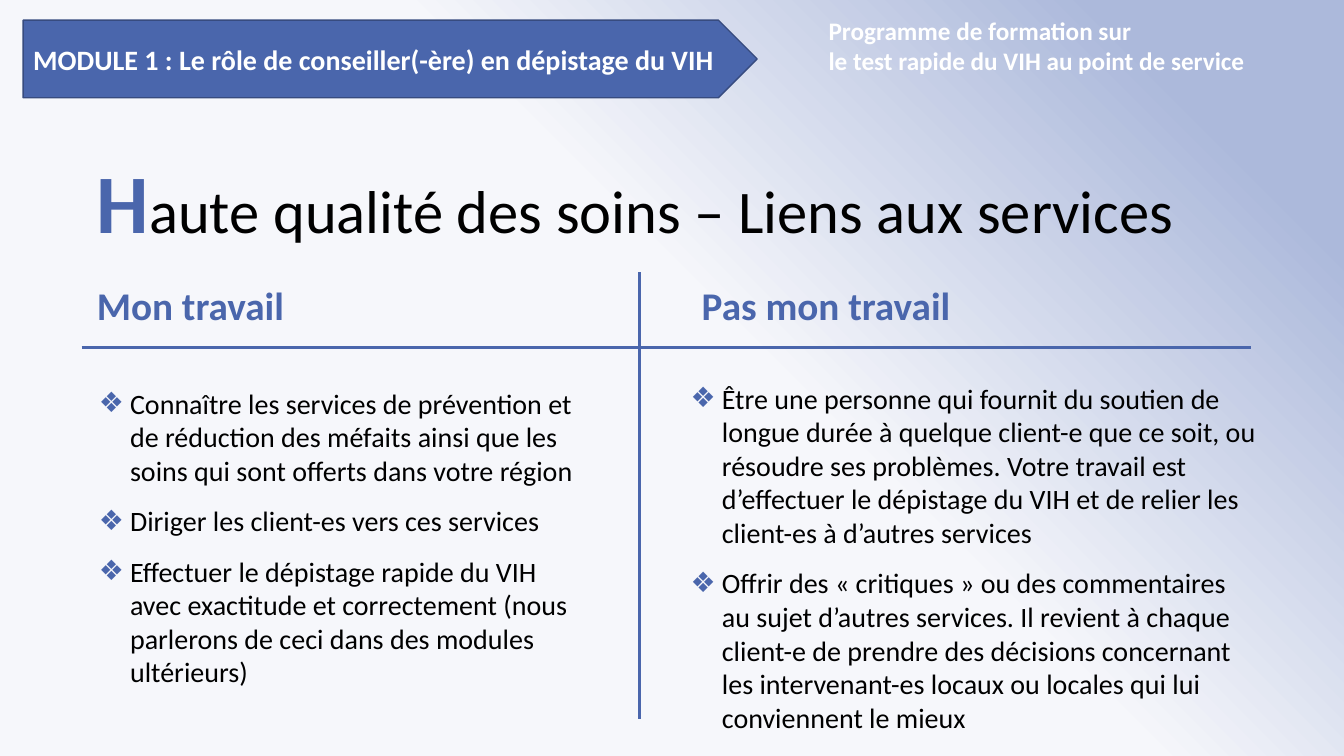
from dataclasses import dataclass

from lxml import etree
from pptx import Presentation
from pptx import util as u
from pptx.dml import color as dml
from pptx.enum import shapes, text
from pptx.oxml import ns

COLOURS = {
    "accent": "4A66AC", "edge": "374B7F", "ink": "000000", "white": "FFFFFF",
    "pale": "F6F7FB", "haze": "ACB9DB", "mist": "C8D1E7",
}
BACKGROUND_STOPS = [(55, "pale"), (88, "haze"), (100, "haze"), (100, "mist")]
FONT = "Calibri"
BULLET_INDENT = u.Inches(0.31)


@dataclass(frozen=True)
class Box:
    left: float
    top: float
    width: float
    height: float

    def lengths(self) -> list:
        return [u.Inches(n) for n in (self.left, self.top, self.width, self.height)]


@dataclass(frozen=True)
class Column:
    heading: str
    heading_box: Box
    items: tuple[str, ...]
    list_box: Box


@dataclass(frozen=True)
class Rule:
    start: tuple[float, float]
    end: tuple[float, float]


COLUMNS = [
    Column(
        "Mon travail", Box(0.86, 2.79, 5.2, 0.55),
        ("Connaître les services de prévention et de réduction des méfaits ainsi que "
         "les soins qui sont offerts dans votre région",
         "Diriger les client-es vers ces services",
         "Effectuer le dépistage rapide du VIH avec exactitude et correctement (nous "
         "parlerons de ceci dans des modules ultérieurs)"),
        Box(0.88, 3.78, 5.07, 3.13)),
    Column(
        "Pas mon travail", Box(6.86, 2.79, 5.2, 0.55),
        ("Être une personne qui fournit du soutien de longue durée à quelque client-e "
         "que ce soit, ou résoudre ses problèmes. Votre travail est d’effectuer le "
         "dépistage du VIH et de relier les client-es à d’autres services",
         "Offrir des « critiques » ou des commentaires au sujet d’autres services. Il "
         "revient à chaque client-e de prendre des décisions concernant les "
         "intervenant-es locaux ou locales qui lui conviennent le mieux"),
        Box(6.75, 3.73, 5.82, 3.64)),
]
RULES = [Rule((6.34, 2.7), (6.34, 7.13)), Rule((0.81, 3.45), (12.41, 3.45))]


def rgb(name: str) -> dml.RGBColor:
    return dml.RGBColor.from_string(COLOURS[name])


def add_colour(parent, name: str) -> None:
    etree.SubElement(parent, ns.qn("a:srgbClr"), val=COLOURS[name])


def add_span(para, words: str, size: float, colour: str, bold: bool = False) -> None:
    span = para.add_run()
    span.text = words
    span.font.name = FONT
    span.font.size = u.Pt(size)
    span.font.bold = bold
    span.font.color.rgb = rgb(colour)


def set_frame(shape, anchor=text.MSO_ANCHOR.TOP):
    frame = shape.text_frame
    frame.word_wrap = True
    frame.auto_size = text.MSO_AUTO_SIZE.NONE
    frame.vertical_anchor = anchor
    frame.paragraphs[0].alignment = text.PP_ALIGN.LEFT
    return frame


def place(shape, box: Box) -> None:
    shape.left, shape.top, shape.width, shape.height = box.lengths()


def paint_background(page) -> None:
    fill = page.background.fill
    fill.gradient()
    fill.gradient_angle = 45
    stops = page.element.find(".//" + ns.qn("a:gsLst"))
    for stop in list(stops):
        stops.remove(stop)
    for percent, colour in BACKGROUND_STOPS:
        add_colour(etree.SubElement(stops, ns.qn("a:gs"), pos=str(percent * 1000)), colour)


def add_bullet(para) -> None:
    props = para._p.get_or_add_pPr()
    props.set("marL", str(BULLET_INDENT))
    props.set("indent", str(-BULLET_INDENT))
    add_colour(etree.SubElement(props, ns.qn("a:buClr")), "accent")
    etree.SubElement(props, ns.qn("a:buChar"), char="❖")


def fill_column(heading, body, column: Column) -> None:
    place(heading, column.heading_box)
    para = set_frame(heading).paragraphs[0]
    para.line_spacing = 0.9
    para.space_before = u.Pt(0)
    add_span(para, column.heading, 28, "accent", True)

    place(body, column.list_box)
    frame = set_frame(body)
    for index, item in enumerate(column.items):
        para = frame.add_paragraph() if index else frame.paragraphs[0]
        add_bullet(para)
        para.space_before = u.Pt(0)
        para.space_after = u.Pt(12)
        add_span(para, item, 20, "ink")


def add_rule(page, rule: Rule) -> None:
    line = page.shapes.add_connector(
        shapes.MSO_CONNECTOR.STRAIGHT,
        *[u.Inches(n) for n in (*rule.start, *rule.end)])
    line.line.color.rgb = rgb("accent")
    line.line.width = u.Pt(2.25)
    etree.SubElement(line._element.spPr, ns.qn("a:effectLst"))


def main() -> None:
    deck = Presentation()
    deck.slide_width, deck.slide_height = u.Inches(13.33), u.Inches(7.5)
    page = deck.slides.add_slide(deck.slide_layouts.get_by_name("Comparison"))
    paint_background(page)

    # Programme name
    programme = page.shapes.add_textbox(*Box(8.12, 0.1, 5, 0.7).lengths())
    para = set_frame(programme).paragraphs[0]
    add_span(para, "Programme de formation sur", 18, "white", True)
    para.add_line_break()
    add_span(para, "le test rapide du VIH au point de service", 18, "white", True)

    # Title with a large initial
    title = page.shapes.title
    place(title, Box(0.86, 1.72, 11.48, 0.83))
    para = set_frame(title, text.MSO_ANCHOR.BOTTOM).paragraphs[0]
    para.line_spacing = 0.9
    add_span(para, "H", 59.4, "accent", True)
    add_span(para, "aute qualité des soins – Liens aux services", 43.2, "ink")

    # Two columns of duties, divided by crossing rules
    slots = list(page.placeholders)[1:]
    for heading, body, column in zip(slots[::2], slots[1::2], COLUMNS):
        fill_column(heading, body, column)
    for rule in RULES:
        add_rule(page, rule)

    # Module banner
    banner = page.shapes.add_shape(
        shapes.MSO_SHAPE.PENTAGON, *Box(0.23, 0.2, 7.28, 0.77).lengths())
    banner.shadow.inherit = False
    banner.fill.solid()
    banner.fill.fore_color.rgb = rgb("accent")
    banner.line.color.rgb = rgb("edge")
    banner.line.width = u.Pt(1)
    para = set_frame(banner, text.MSO_ANCHOR.MIDDLE).paragraphs[0]
    add_span(para, "MODULE 1 : Le rôle de conseiller(-ère) en dépistage du VIH",
             20, "white", True)

    deck.save("out.pptx")


if __name__ == "__main__":
    main()
